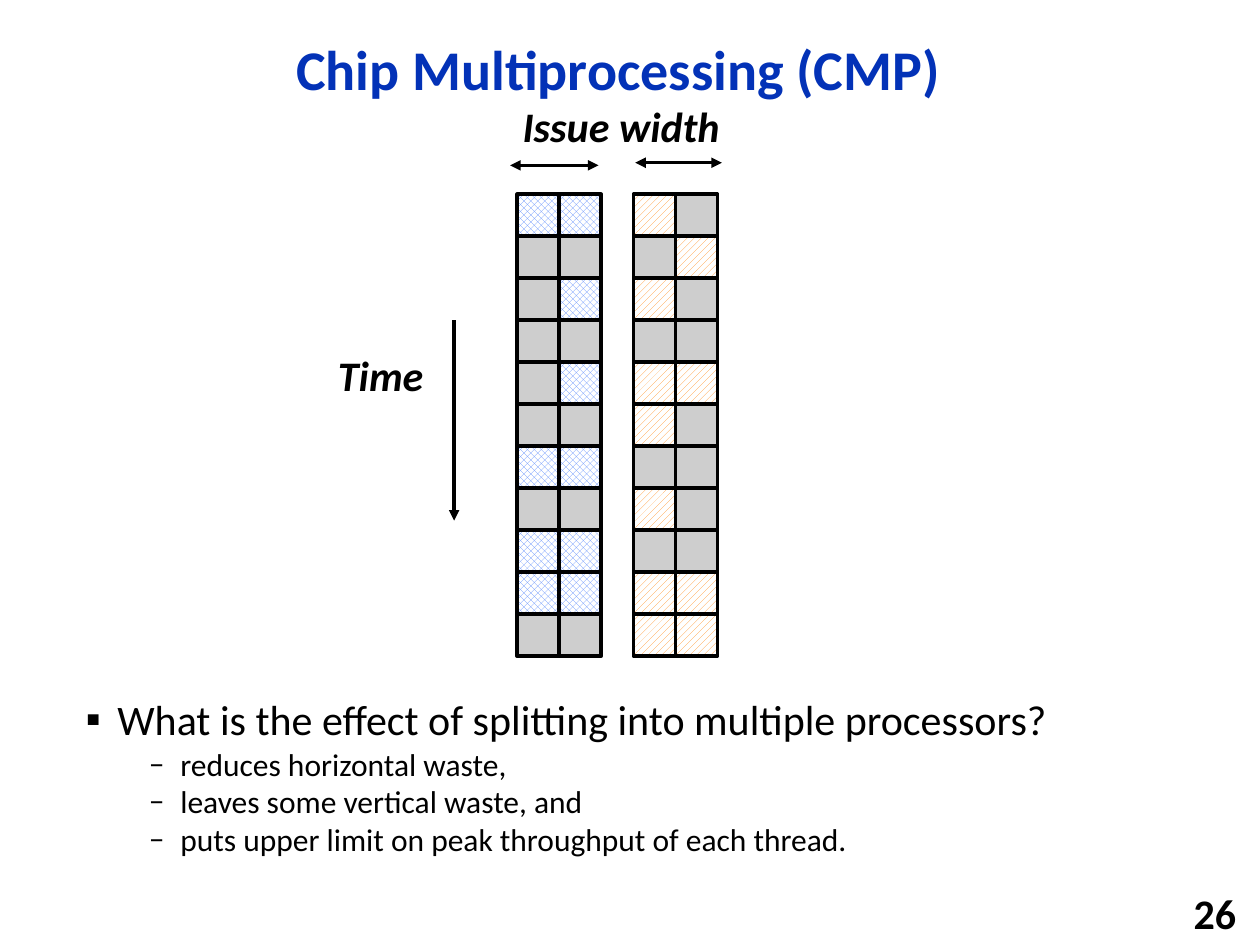
"""Build the chip multiprocessing slide: issue slots over time for two cores."""
from dataclasses import dataclass

from lxml import etree
from pptx import Presentation
from pptx.dml.color import RGBColor
from pptx.enum.dml import MSO_PATTERN
from pptx.enum.shapes import MSO_CONNECTOR, MSO_SHAPE
from pptx.enum.text import MSO_ANCHOR, MSO_AUTO_SIZE, PP_ALIGN
from pptx.oxml.ns import qn
from pptx.util import Pt

RECTANGLE = MSO_SHAPE.RECTANGLE
STRAIGHT = MSO_CONNECTOR.STRAIGHT
DIAMONDS = MSO_PATTERN.SOLID_DIAMOND
DIAGONALS = MSO_PATTERN.WIDE_UPWARD_DIAGONAL
MIDDLE = MSO_ANCHOR.MIDDLE
LEFT, CENTER, RIGHT = PP_ALIGN.LEFT, PP_ALIGN.CENTER, PP_ALIGN.RIGHT


@dataclass(frozen=True)
class Theme:
    font: str = "Calibri"
    title: RGBColor = RGBColor(0x03, 0x32, 0xB7)
    ink: RGBColor = RGBColor(0, 0, 0)
    paper: RGBColor = RGBColor(0xFF, 0xFF, 0xFF)
    idle: RGBColor = RGBColor(0xCE, 0xCE, 0xCE)
    first_thread: RGBColor = RGBColor(0x61, 0x8F, 0xFD)
    second_thread: RGBColor = RGBColor(0xFF, 0x99, 0x33)
    title_size: int = 32
    text_size: int = 24
    detail_size: int = 18
    line: int = 2


THEME = Theme()


def style(paragraph, size, color=THEME.ink, bold=False, italic=False, align=LEFT):
    font = paragraph.font
    font.name, font.size, font.color.rgb = THEME.font, Pt(size), color
    font.bold, font.italic = bold, italic
    paragraph.alignment = align


def add_text(left, top, width, height, lines, wrap=True):
    box = slide.shapes.add_textbox(Pt(left), Pt(top), Pt(width), Pt(height))
    frame = box.text_frame
    frame.text = "\n".join(lines)
    frame.word_wrap = wrap
    return frame


prs = Presentation()
prs.slide_width, prs.slide_height = Pt(720), Pt(540)
slide = prs.slides.add_slide(prs.slide_layouts[5])

title = slide.shapes.title
title.left, title.top, title.width, title.height = Pt(66), Pt(12), Pt(575), Pt(58.5)
title.text_frame.text = "Chip Multiprocessing (CMP)"
title.text_frame.vertical_anchor = MIDDLE
heading = title.text_frame.paragraphs[0]
heading.line_spacing = 0.9
style(heading, THEME.title_size, THEME.title, bold=True, align=CENTER)

page_number = add_text(563.5, 510, 150, 23, ["26"], wrap=False)
page_number.vertical_anchor = MIDDLE
style(page_number.paragraphs[0], THEME.text_size, bold=True, align=RIGHT)

discussion = add_text(42, 396, 618, 101.5, [
    "What is the effect of splitting into multiple processors?",
    "reduces horizontal waste,",
    "leaves some vertical waste, and",
    "puts upper limit on peak throughput of each thread.",
])
question, *effects = discussion.paragraphs
question.line_spacing = 0.9
style(question, THEME.text_size)
for effect in effects:
    effect.level = 1
    style(effect, THEME.detail_size)
for paragraph in discussion.paragraphs:
    margin, bullet = (54, "–") if paragraph.level else (18, "▪")
    properties = paragraph._p.get_or_add_pPr()
    properties.set("marL", str(Pt(margin)))
    properties.set("indent", str(Pt(-18)))
    etree.SubElement(properties, qn("a:buFont")).set("typeface", THEME.font)
    etree.SubElement(properties, qn("a:buChar")).set("char", bullet)
    properties.append(properties.find(qn("a:defRPr")))

SLOT, GRID_TOP = 24, 111
cores = [
    (295.5, DIAMONDS, THEME.first_thread,
     ["##", "..", ".#", "..", ".#", "..", "##", "..", "##", "##", ".."]),
    (362, DIAGONALS, THEME.second_thread,
     ["#.", ".#", "#.", "..", "##", "#.", "..", "#.", "..", "##", "##"]),
]
for core_left, pattern, color, cycles in cores:
    for row, cycle in enumerate(cycles):
        for column, state in enumerate(cycle):
            slot = slide.shapes.add_shape(
                RECTANGLE, Pt(core_left + column * SLOT), Pt(GRID_TOP + row * SLOT),
                Pt(SLOT), Pt(SLOT))
            slot.shadow.inherit = False
            slot.line.color.rgb, slot.line.width = THEME.ink, Pt(THEME.line)
            if state == "#":
                slot.fill.patterned()
                slot.fill.pattern = pattern
                slot.fill.fore_color.rgb = color
                slot.fill.back_color.rgb = THEME.paper
            else:
                slot.fill.solid()
                slot.fill.fore_color.rgb = THEME.idle

axis_labels = [
    ("Issue width", 291.5, 54, 140.5, True),
    ("Time", 186, 196, 70, False),
]
for label, left, top, width, wrap in axis_labels:
    axis = add_text(left, top, width, 36, [label], wrap)
    axis.auto_size = MSO_AUTO_SIZE.SHAPE_TO_FIT_TEXT
    style(axis.paragraphs[0], THEME.text_size, bold=True, italic=True)

arrows = [
    (291.5, 94.5, 342, 94.5, ["headEnd", "tailEnd"]),
    (363, 93, 412.5, 93, ["headEnd", "tailEnd"]),
    (259.5, 183, 259.5, 297.5, ["tailEnd"]),
]
for x1, y1, x2, y2, ends in arrows:
    arrow = slide.shapes.add_connector(STRAIGHT, Pt(x1), Pt(y1), Pt(x2), Pt(y2))
    arrow.line.color.rgb, arrow.line.width = THEME.ink, Pt(THEME.line)
    for end in ends:
        etree.SubElement(arrow.line._get_or_add_ln(), qn(f"a:{end}")).set("type", "triangle")
    etree.SubElement(arrow._element.spPr, qn("a:effectLst"))

prs.save("out.pptx")
